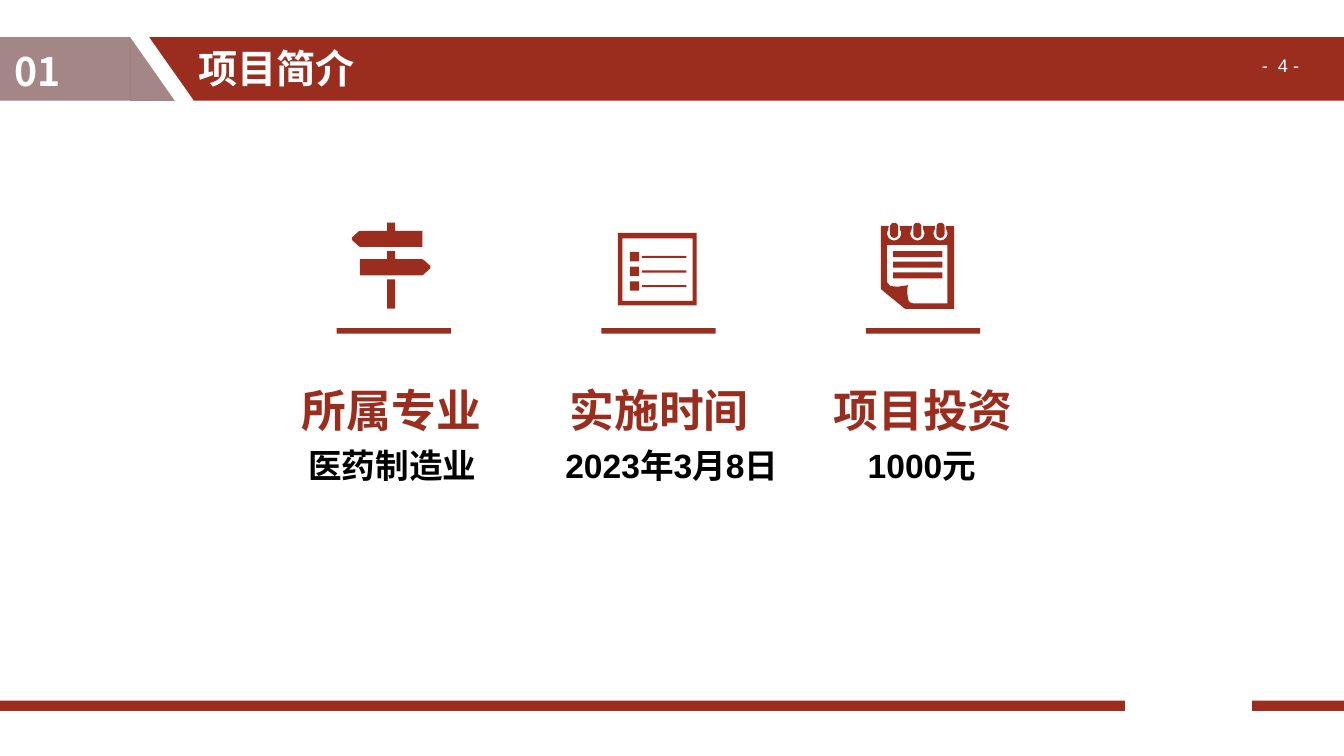
from math import cos, radians, sin

from lxml import etree
from pptx import Presentation
from pptx.dml.color import RGBColor
from pptx.enum.shapes import MSO_SHAPE
from pptx.enum.text import MSO_ANCHOR, MSO_AUTO_SIZE, PP_ALIGN
from pptx.oxml.ns import qn
from pptx.util import Pt

RECT, WEDGE = MSO_SHAPE.RECTANGLE, MSO_SHAPE.RIGHT_TRIANGLE
LEFT, CENTER = PP_ALIGN.LEFT, PP_ALIGN.CENTER
RED = RGBColor(0x9B, 0x2D, 0x1F)
MAUVE = RGBColor(0x85, 0x5D, 0x5D)
WHITE = RGBColor(255, 255, 255)
BLACK = RGBColor(0, 0, 0)

deck = Presentation()
deck.slide_width, deck.slide_height = Pt(960), Pt(540)
slide = deck.slides.add_slide(deck.slide_layouts[5])
shapes = slide.shapes


def paint(shape, color=RED):
    shape.shadow.inherit = False
    shape.fill.solid()
    shape.fill.fore_color.rgb = color
    shape.line.fill.background()


def draw(left, top, rings):
    """Draw closed rings of points as one red shape; a ring inside another is a hole."""
    pen = None
    for ring in rings:
        dots = [(x * 100, y * 100) for x, y in ring]
        if pen is None:
            pen = shapes.build_freeform(*dots[0], scale=Pt(0.01))
        else:
            pen.move_to(*dots[0])
        pen.add_line_segments(dots[1:], close=True)
    paint(pen.convert_to_shape(Pt(left), Pt(top)))


# Header band and footer bar
bands = [
    (WEDGE, 106.6, 26.6, 32, 45.4, RED, 180),
    (RECT, 0, 26.6, 93, 45.4, MAUVE, 0),
    (RECT, 138.4, 26.6, 821.6, 45.4, RED, 0),
    (WEDGE, 93, 26.6, 31.8, 45.4, MAUVE, 0),
    (RECT, 0, 500.4, 960, 7.4, RED, 0),
    (RECT, 804, 497.5, 90, 13, WHITE, 0),
]
for kind, left, top, wide, high, color, turn in bands:
    band = shapes.add_shape(kind, Pt(left), Pt(top), Pt(wide), Pt(high))
    paint(band, color)
    band.rotation = turn
    if color == MAUVE:
        tint = band.fill._xPr.find(qn("a:solidFill"))[0]
        etree.SubElement(tint, qn("a:alpha")).set("val", "74000")
    if color == WHITE:
        band.line.color.rgb = WHITE
        band.line.width = Pt(1)

# Signpost icon: the lower board mirrors the upper one
board = [(25.2, 5.8), (6, 5.8), (4.8, 6.3), (0, 10.7), (0, 12.2), (4.8, 16.6),
         (6, 17.3), (50.4, 17.3), (50.4, 5.8), (31, 5.8), (31, 0), (25.2, 0)]
draw(251.3, 159.1, [board])
draw(256.6, 179.4, [[(50.9 - x, y) for x, y in board]])

# List icon
draw(441.4, 166.3, [
    [(0, 0), (0, 51.8), (56.2, 51.8), (56.2, 0)],
    [(53.3, 48.6), (3.2, 48.6), (3.2, 3.9), (53.3, 3.9)],
])

# Notepad icon with three binder hooks
hooks = (9.4, 26, 42.5)
page = [(52.3, 2.2)]
for mid in reversed(hooks):
    page.append((mid + 4, 2.2))
    for turn in range(-36, 217, 12):
        page.append((mid + 5 * cos(radians(turn)), 7.6 + 5 * sin(radians(turn))))
    page.append((mid - 4, 2.2))
page += [(0, 2.2), (0, 47.5), (17.3, 61.6), (52.3, 61.6)]
inner = [(47.5, 57.6), (23, 57.6), (21, 57), (19.7, 55.6), (18.8, 51.1),
         (18.8, 46.6), (19.4, 44.6), (11.9, 45.7), (6.7, 45.2), (4.3, 42.5),
         (4.3, 15.8), (47.5, 15.8)]
rings = [page, inner]
for row in range(3):
    top = 20.2 + 7.6 * row
    rings.append([(8.6, top), (43.9, top), (43.9, top + 4.3), (8.6, top + 4.3)])
for mid in hooks:
    pill = []
    for turn in range(0, 361, 15):
        base = 7.9 if turn <= 180 else 2.9
        pill.append((mid + 2.9 * cos(radians(turn)), base + 2.9 * sin(radians(turn))))
    rings.append(pill)
draw(629.3, 159.1, rings)

# Post, list rows and the rule under each icon
bars = [(276.5, 199.6, 5.8, 20.9)]
for row in range(3):
    bars.append((450, 180 + 10.5 * row, 6.5, 6.7))
    bars.append((458.6, 182.7 + 10.5 * row, 31.7, 1.5))
for col in range(3):
    bars.append((240.5 + 189 * col, 234.4, 81.7, 3.9))
for bar in bars:
    paint(shapes.add_shape(RECT, *map(Pt, bar)))

# Texts: box, wording, wrap, alignment, spacing, font
num = {"name": "Arial", "size": Pt(13), "color": WHITE}
part = {"name": "Noto Sans CJK SC", "size": Pt(28), "bold": True, "color": WHITE}
head = {"name": "Arial", "size": Pt(28), "bold": True, "color": WHITE}
label = {"name": "Arial", "size": Pt(32), "bold": True, "color": RED}
value = {"name": "Arial", "size": Pt(24), "bold": True, "color": BLACK}
texts = [
    ((894.2, 35.3, 56.2, 23.8), "-  4 -", False, LEFT, 1, num),
    ((3.6, 30.2, 134.6, 41), "01", True, LEFT, 1, part),
    ((134.6, 30.2, 756, 40.3), "项目简介", True, LEFT, 0.9, head),
    ((196.6, 250.6, 166.3, 58.3), "所属专业", True, CENTER, 1.5, label),
    ((398.9, 250.6, 144, 58.3), "实施时间", False, CENTER, 1.5, label),
    ((587.5, 250.6, 144, 58.3), "项目投资", False, CENTER, 1.5, label),
    ((213.1, 313.9, 136.1, 36), "医药制造业", True, LEFT, 1, value),
    ((396.7, 313.9, 168.5, 36), "2023年3月8日", True, LEFT, 1, value),
    ((612.7, 313.9, 92.9, 36), "1000元", True, LEFT, 1, value),
]
for place, words, wrap, align, space, font in texts:
    if font is head:
        box = shapes.title
        box.left, box.top, box.width, box.height = map(Pt, place)
        tree = box._element.getparent()
        tree.append(box._element)
    else:
        box = shapes.add_textbox(*map(Pt, place))
    frame = box.text_frame
    frame.text = words
    frame.word_wrap = wrap
    frame.auto_size = MSO_AUTO_SIZE.NONE
    frame.vertical_anchor = MSO_ANCHOR.MIDDLE if font is head else MSO_ANCHOR.TOP
    line = frame.paragraphs[0]
    line.alignment, line.line_spacing = align, space
    run = line.runs[0]
    for key, val in font.items():
        if key == "color":
            run.font.color.rgb = val
        else:
            setattr(run.font, key, val)

deck.save("out.pptx")
